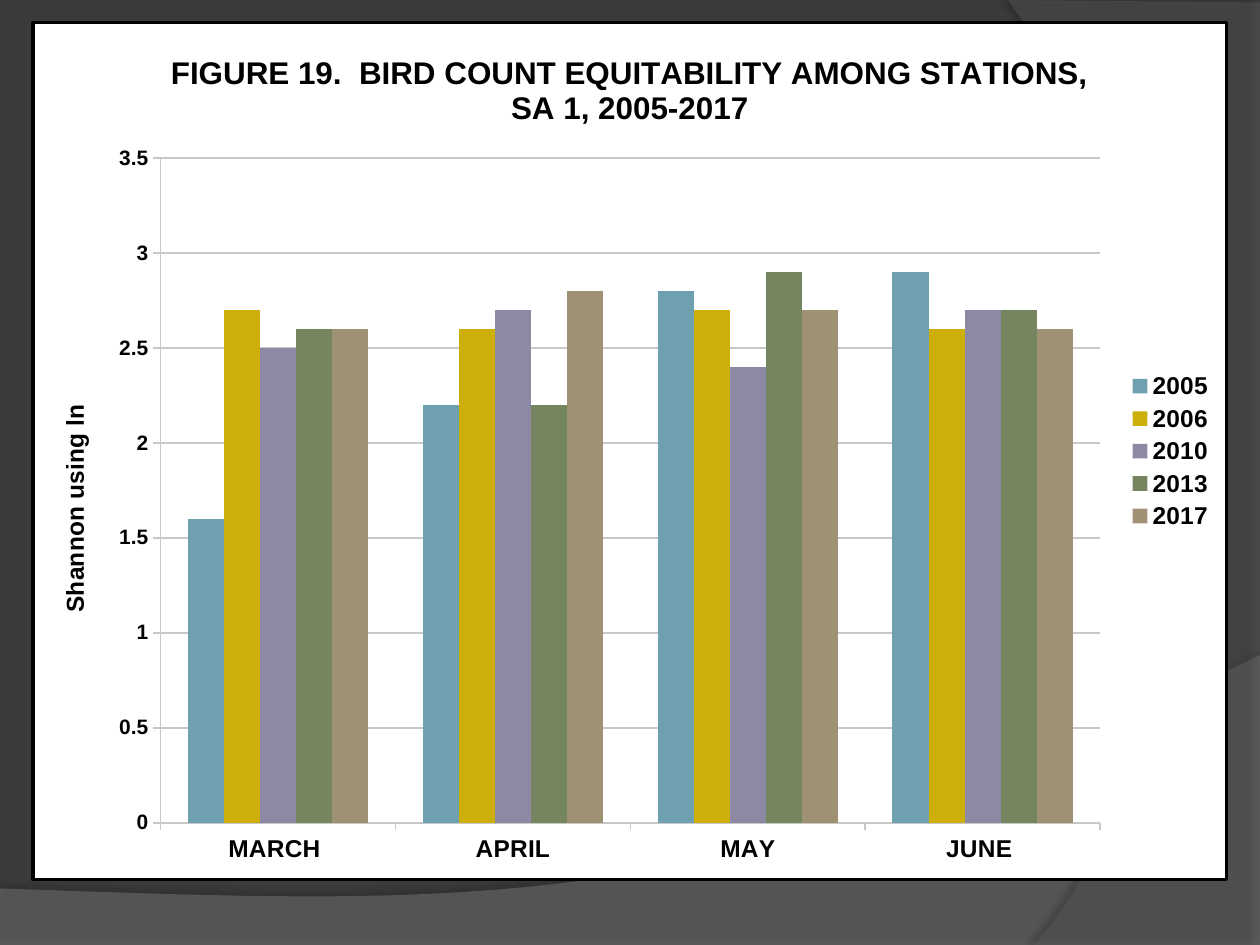
from lxml import etree
from pptx import Presentation
from pptx import util as u
from pptx.chart.data import CategoryChartData
from pptx.dml.color import RGBColor
from pptx.enum import chart as charts
from pptx.oxml import parse_xml
from pptx.oxml.ns import nsdecls, qn

TITLE = "FIGURE 19.  BIRD COUNT EQUITABILITY AMONG STATIONS, SA 1, 2005-2017"
AXIS_TITLE = "Shannon using ln "
MONTHS = ["MARCH ", "APRIL", "MAY", "JUNE "]
YEARS = [
    ("2005", "6EA0B0", (1.6, 2.2, 2.8, 2.9)),
    ("2006", "CCAF0A", (2.7, 2.6, 2.7, 2.6)),
    ("2010", "8D89A4", (2.5, 2.7, 2.4, 2.7)),
    ("2013", "748560", (2.6, 2.2, 2.9, 2.7)),
    ("2017", "9E9273", (2.6, 2.8, 2.7, 2.6)),
]
THEME = {
    "font": "Arial", "background": "3B3B3B", "text": "000000",
    "grid": "C8C8C8", "panel": "FFFFFF", "border": "000000",
    "title": 18, "label": 14, "scale": 12,
}
CHART_WIDTH, CHART_HEIGHT = 24.13, 17.35
WAVES = [
    {"start": (25.4, 13.21), "curve": ((14.2, 18.52), (9.93, 18.26), (0, 17.91)),
     "corners": [(0, 19.05), (25.4, 19.05)], "color": "7F7F7F", "opacity": 45,
     "shadow": (35, 4, 3.5, 270)},
    {"start": (20.85, 19.05), "curve": ((23.75, 15.72), (25.86, 7.62), (20.32, 0)),
     "corners": [(25.4, 0.05), (25.4, 19.05)], "color": "5E5E5E", "opacity": 40,
     "shadow": (45, 4, 4, 180)},
]


def color(name):
    return RGBColor.from_string(THEME.get(name, name))


def format_font(font, size, bold=True):
    font.name = THEME["font"]
    font.size = u.Pt(size)
    font.bold = bold
    font.color.rgb = color("text")


def write_text(frame, text, size, bold=True):
    frame.text = text
    format_font(frame.paragraphs[0].runs[0].font, size, bold)


def bezier(points, steps=40):
    for step in range(1, steps + 1):
        t = step / steps
        weights = ((1 - t) ** 3, 3 * t * (1 - t) ** 2, 3 * t * t * (1 - t), t ** 3)
        yield tuple(u.Cm(sum(w * p[axis] for w, p in zip(weights, points)))
                    for axis in (0, 1))


def add_wave(slide, wave):
    start = wave["start"]
    builder = slide.shapes.build_freeform(u.Cm(start[0]), u.Cm(start[1]))
    corners = [(u.Cm(x), u.Cm(y)) for x, y in wave["corners"]]
    builder.add_line_segments(list(bezier((start, *wave["curve"]))) + corners)
    shape = builder.convert_to_shape()
    shape.fill.solid()
    shape.fill.fore_color.rgb = color(wave["color"])
    shape.line.fill.background()
    properties = shape._element.spPr
    fill = properties.find(qn("a:solidFill"))[0]
    etree.SubElement(fill, qn("a:alpha")).set("val", str(wave["opacity"] * 1000))
    opacity, blur, distance, angle = wave["shadow"]
    properties.append(parse_xml(
        f'<a:effectLst {nsdecls("a")}><a:outerShdw blurRad="{u.Pt(blur)}" '
        f'dist="{u.Pt(distance)}" dir="{angle * 60000}" rotWithShape="0">'
        f'<a:srgbClr val="000000"><a:alpha val="{opacity * 1000}"/></a:srgbClr>'
        '</a:outerShdw></a:effectLst>'))


def place(element, index, **lengths):
    for layout in element.findall(qn("c:layout")):
        element.remove(layout)
    totals = {"x": CHART_WIDTH, "y": CHART_HEIGHT, "w": CHART_WIDTH, "h": CHART_HEIGHT}
    target = '<c:layoutTarget val="inner"/>' if "w" in lengths else ""
    modes = "".join(f'<c:{key}Mode val="edge"/>' for key in "xy")
    values = "".join(f'<c:{key} val="{length / totals[key]:.5f}"/>'
                     for key, length in lengths.items())
    element.insert(index, parse_xml(
        f'<c:layout {nsdecls("c")}><c:manualLayout>{target}{modes}{values}'
        '</c:manualLayout></c:layout>'))


def add_panel(chart):
    chart._chartSpace.find(qn("c:chart")).addnext(parse_xml(
        f'<c:spPr {nsdecls("c", "a")}>'
        f'<a:solidFill><a:srgbClr val="{THEME["panel"]}"/></a:solidFill>'
        f'<a:ln w="{u.Pt(2)}"><a:solidFill><a:srgbClr val="{THEME["border"]}"/>'
        '</a:solidFill></a:ln></c:spPr>'))


def format_axis(axis, size):
    format_font(axis.tick_labels.font, size)
    axis.major_tick_mark = charts.XL_TICK_MARK.OUTSIDE
    axis.minor_tick_mark = charts.XL_TICK_MARK.NONE
    axis.format.line.color.rgb = color("grid")
    axis.format.line.width = u.Pt(1)


def add_bird_chart(slide):
    data = CategoryChartData(number_format="General")
    data.categories = MONTHS
    for year, _, values in YEARS:
        data.add_series(year, values)
    chart = slide.shapes.add_chart(
        charts.XL_CHART_TYPE.COLUMN_CLUSTERED, u.Cm(0.63), u.Cm(0.42),
        u.Cm(CHART_WIDTH), u.Cm(CHART_HEIGHT), data).chart
    format_font(chart.font, 10, bold=False)
    add_panel(chart)

    chart.has_title = True
    write_text(chart.chart_title.text_frame, TITLE, THEME["title"])
    chart.chart_title.include_in_layout = False

    plot = chart.plots[0]
    plot.gap_width = 150
    plot.overlap = 0
    plot.vary_by_categories = False
    for series, (_, fill, _) in zip(plot.series, YEARS):
        series.format.fill.solid()
        series.format.fill.fore_color.rgb = color(fill)
        series.invert_if_negative = False

    format_axis(chart.category_axis, THEME["label"])
    scale = chart.value_axis
    format_axis(scale, THEME["scale"])
    scale.minimum_scale, scale.maximum_scale, scale.major_unit = 0, 3.5, 0.5
    scale.has_major_gridlines = True
    scale.major_gridlines.format.line.color.rgb = color("grid")
    scale.major_gridlines.format.line.width = u.Pt(1)
    scale.has_title = True
    write_text(scale.axis_title.text_frame, AXIS_TITLE, THEME["label"])
    scale.axis_title.text_frame._txBody.bodyPr.set("rot", "-5400000")
    scale.axis_title.text_frame._txBody.bodyPr.set("vert", "horz")

    chart.has_legend = True
    chart.legend.position = charts.XL_LEGEND_POSITION.RIGHT
    chart.legend.include_in_layout = False
    format_font(chart.legend.font, THEME["label"])

    place(scale.axis_title._element, 1, x=0.43, y=7.5)
    place(chart._chartSpace.chart.plotArea, 0, x=2.58, y=2.74, w=19, h=13.46)


def main():
    presentation = Presentation()
    presentation.slide_width, presentation.slide_height = u.Cm(25.4), u.Cm(19.05)
    slide = presentation.slides.add_slide(presentation.slide_layouts[6])
    slide.background.fill.solid()
    slide.background.fill.fore_color.rgb = color("background")
    for wave in WAVES:
        add_wave(slide, wave)
    add_bird_chart(slide)
    presentation.save("out.pptx")


if __name__ == "__main__":
    main()
